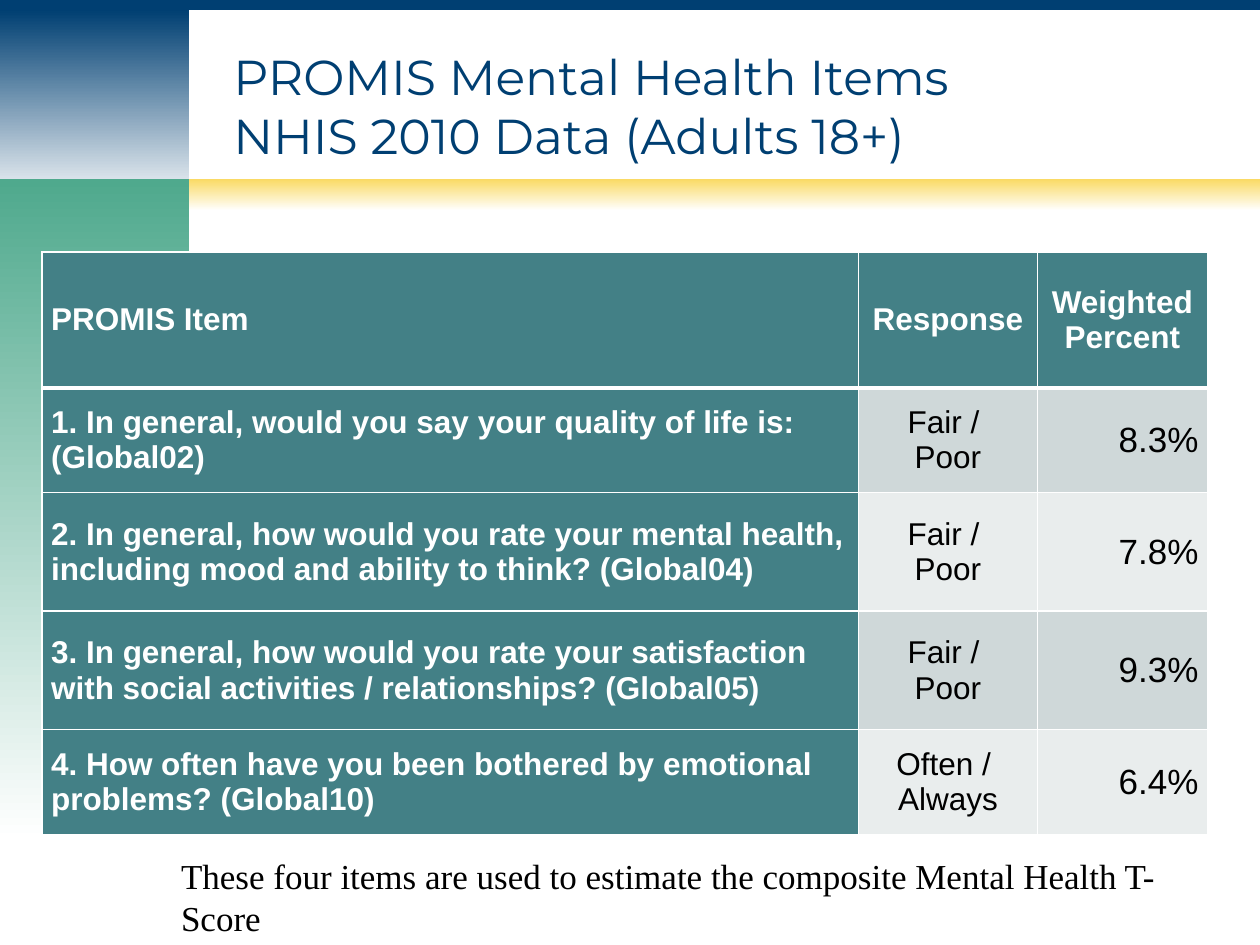
from lxml.etree import SubElement
from pptx import Presentation
from pptx.dml.color import RGBColor
from pptx.enum.shapes import MSO_SHAPE
from pptx.enum.text import MSO_ANCHOR, PP_ALIGN
from pptx.oxml.ns import qn
from pptx.util import Cm, Pt

NAVY, GREEN, YELLOW, WHITE, BLACK = "003F72", "4FA98D", "FADA63", "FFFFFF", "000000"
TEAL, BANDS = "438086", ("CFD8D9", "E9EDED")
COLS = (16.46, 3.6, 3.43)
ROWS = (2.74, 2.11, 2.39, 2.39, 2.11)
HEADER = ("PROMIS Item", "Response", "Weighted Percent")
ITEMS = (
    ("1. In general, would you say your quality of life is: (Global02)",
     ("Fair / ", "Poor"), "8.3%"),
    ("2. In general, how would you rate your mental health, including mood "
     "and ability to think? (Global04)", ("Fair / ", "Poor"), "7.8%"),
    ("3. In general, how would you rate your satisfaction with social "
     "activities / relationships? (Global05)", ("Fair / ", "Poor"), "9.3%"),
    ("4. How often have you been bothered by emotional problems? (Global10)",
     ("Often / ", "Always"), "6.4%"),
)


def rgb(value):
    return RGBColor.from_string(value)


def add_run(p, text, size, color, font="Arial", bold=False):
    r = p.add_run()
    r.text = text
    r.font.size, r.font.name, r.font.bold = Pt(size), font, bold
    r.font.color.rgb = rgb(color)


def add_bar(s, x, y, w, h, color, fade=True):
    sp = s.shapes.add_shape(MSO_SHAPE.RECTANGLE, Cm(x), Cm(y), Cm(w), Cm(h))
    sp.shadow.inherit = False
    sp.line.fill.background()
    if fade:
        sp.fill.gradient()
        sp.fill.gradient_angle = 270
        for stop, c in zip(sp.fill.gradient_stops, (color, WHITE)):
            stop.color.rgb = rgb(c)
    else:
        sp.fill.solid()
        sp.fill.fore_color.rgb = rgb(color)


def add_frame(s, x, y, w, h):
    """Coloured bands along the top and left; h is the depth of the heading."""
    side, strip = 3.81, 0.2
    add_bar(s, x, y + strip, side, h + 0.4, NAVY)
    add_bar(s, x + side, y + h, w - side, 0.64, YELLOW)
    add_bar(s, x, y, w, strip, NAVY, fade=False)
    add_bar(s, x, y + h, side, 13.33, GREEN)


def add_title(s, x, y, w, h):
    sp = s.shapes.title
    sp.left, sp.top, sp.width, sp.height = Cm(x), Cm(y), Cm(w), Cm(h)
    tf = sp.text_frame
    tf.vertical_anchor = MSO_ANCHOR.MIDDLE
    p = tf.paragraphs[0]
    p.alignment = PP_ALIGN.LEFT
    add_run(p, "PROMIS Mental Health Items", 28, NAVY, "Montserrat")
    p.add_line_break()
    add_run(p, "NHIS 2010 Data (Adults 18+)", 28, NAVY, "Montserrat")


def set_borders(cell, top, bottom):
    tcPr = cell._tc.get_or_add_tcPr()
    for side, width in (("L", 1), ("R", 1), ("T", top), ("B", bottom)):
        ln = SubElement(tcPr, qn(f"a:ln{side}"), w=str(Pt(width)))
        fill = SubElement(ln, qn("a:solidFill"))
        SubElement(fill, qn("a:srgbClr"), val=WHITE)


def fill_cell(cell, lines, align, size, color, bold, back):
    cell.vertical_anchor = MSO_ANCHOR.MIDDLE
    cell.margin_left = cell.margin_right = Cm(0.18)
    cell.margin_top = cell.margin_bottom = 0
    cell.fill.solid()
    cell.fill.fore_color.rgb = rgb(back)
    tf = cell.text_frame
    for i, line in enumerate(lines):
        p = tf.add_paragraph() if i else tf.paragraphs[0]
        p.alignment = align
        add_run(p, line, size, color, bold=bold)


def add_items_table(s, x, y):
    table = s.shapes.add_table(len(ROWS), len(COLS), Cm(x), Cm(y),
                               Cm(sum(COLS)), Cm(sum(ROWS))).table
    for col, w in zip(table.columns, COLS):
        col.width = Cm(w)
    for row, h in zip(table.rows, ROWS):
        row.height = Cm(h)
    for i in range(len(ROWS)):
        for cell in table.rows[i].cells:
            set_borders(cell, 3 if i == 1 else 1, 3 if i == 0 else 1)

    # Header row
    for j, text in enumerate(HEADER):
        align = PP_ALIGN.CENTER if j else PP_ALIGN.LEFT
        fill_cell(table.cell(0, j), [text], align, 18, WHITE, True, TEAL)

    # Item rows
    for i, (item, response, percent) in enumerate(ITEMS):
        band = BANDS[i % 2]
        fill_cell(table.cell(i + 1, 0), [item], PP_ALIGN.LEFT, 18, WHITE, True, TEAL)
        fill_cell(table.cell(i + 1, 1), response, PP_ALIGN.CENTER, 18, BLACK, False, band)
        fill_cell(table.cell(i + 1, 2), [percent], PP_ALIGN.RIGHT, 20, BLACK, False, band)


def add_note(s, x, y, w, h):
    tf = s.shapes.add_textbox(Cm(x), Cm(y), Cm(w), Cm(h)).text_frame
    tf.word_wrap = True
    add_run(tf.paragraphs[0], "These four items are used to estimate the composite "
            "Mental Health T-Score", 20, BLACK, "Times New Roman")


def main():
    prs = Presentation()
    prs.slide_width, prs.slide_height = Cm(25.4), Cm(19.05)
    s = prs.slides.add_slide(prs.slide_layouts[5])
    add_frame(s, 0, 0, 25.4, 3.61)
    add_title(s, 4.45, 0.64, 20.75, 2.97)
    add_items_table(s, 0.85, 5.08)
    add_note(s, 3.4, 17.1, 21.69, 1.12)
    prs.save("out.pptx")


if __name__ == "__main__":
    main()
